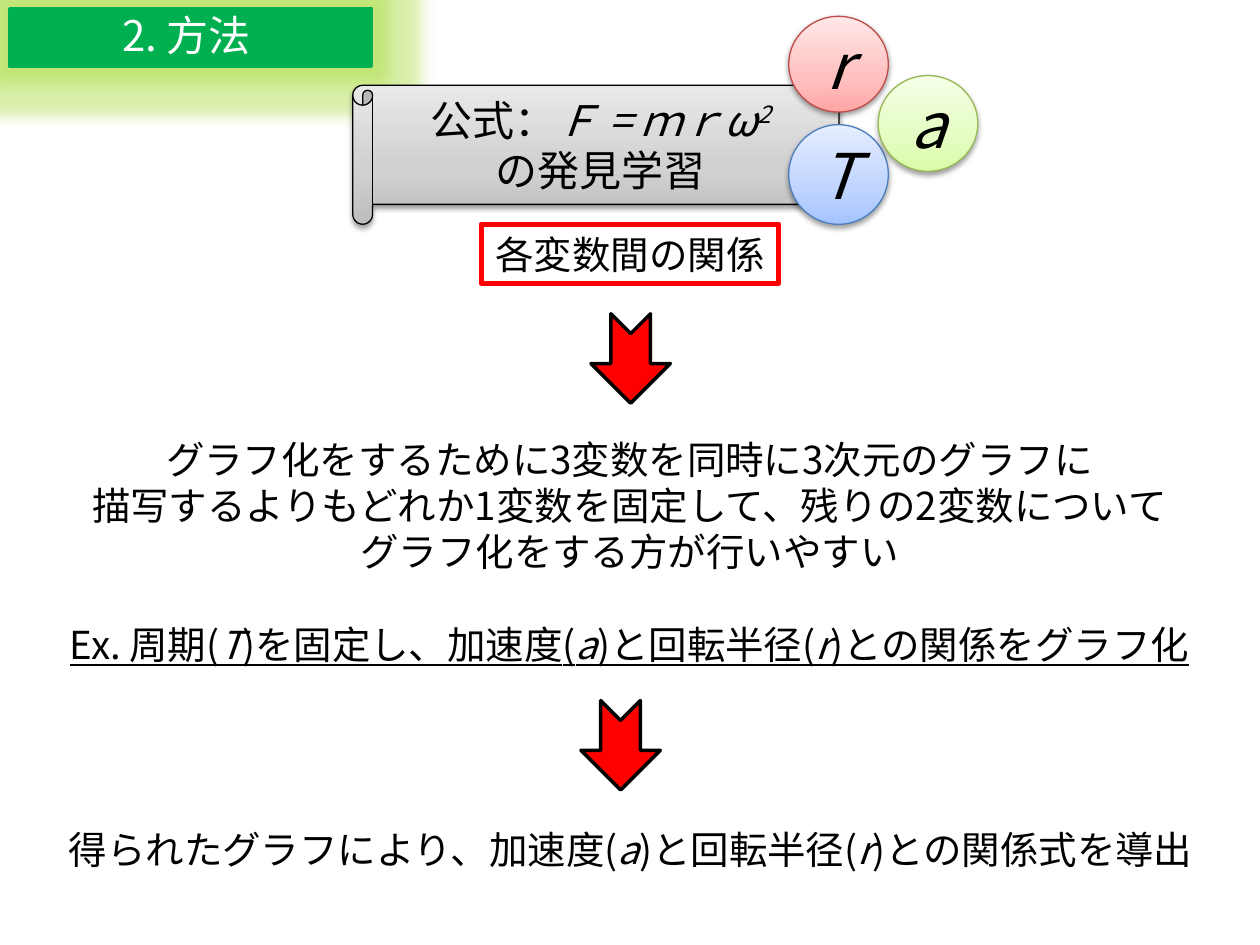
import pptx
import pptx.dml.color
import pptx.enum.shapes
import pptx.enum.text
import pptx.oxml
import pptx.oxml.ns
import pptx.util
from pptx.util import Inches

FONT = "Noto Sans CJK JP"
NAMESPACE = pptx.oxml.ns.nsdecls("a")
SHAPES = pptx.enum.shapes.MSO_SHAPE
ANCHORS = pptx.enum.text.MSO_ANCHOR
CENTER = pptx.enum.text.PP_ALIGN.CENTER


def color(value):
    return pptx.dml.color.RGBColor.from_string(value)


def set_text(shape, paragraphs, size, hue="000000", anchor=ANCHORS.MIDDLE, wrap=True):
    """Write paragraphs, each a list of (text, style) with style letters i, u and ^."""
    frame = shape.text_frame
    frame.auto_size = pptx.enum.text.MSO_AUTO_SIZE.NONE
    frame.word_wrap = wrap
    frame.vertical_anchor = anchor
    for index, runs in enumerate(paragraphs):
        para = frame.add_paragraph() if index else frame.paragraphs[0]
        para.alignment = CENTER
        for text, style in runs:
            span = para.add_run()
            span.text = text
            span.font.name = FONT
            span.font.size = pptx.util.Pt(size)
            span.font.color.rgb = color(hue)
            span.font.italic = "i" in style
            span.font.underline = "u" in style
            properties = span.font._element
            properties.append(pptx.oxml.parse_xml(
                f'<a:ea {NAMESPACE} typeface="{FONT}"/>'))
            if "^" in style:
                properties.set("baseline", "30000")


def add_outlined(page, kind, place, line, width, fill=None):
    shape = page.shapes.add_shape(kind, *map(Inches, place))
    shape.shadow.inherit = False
    shape.line.color.rgb = color(line)
    shape.line.width = pptx.util.Pt(width)
    if fill:
        shape.fill.solid()
        shape.fill.fore_color.rgb = color(fill)
    else:
        shape.fill.background()
    return shape


def add_effect(shape, tag, attributes, hue, alpha):
    effects = shape._element.spPr.find(pptx.oxml.ns.qn("a:effectLst"))
    effects.append(pptx.oxml.parse_xml(
        f'<a:{tag} {NAMESPACE} {attributes}><a:srgbClr val="{hue}">'
        f'<a:alpha val="{alpha * 1000}"/></a:srgbClr></a:{tag}>'))


def add_shaded(page, kind, place, line, stops):
    """Add a shape with a soft shadow and three colours from bottom to top."""
    shape = add_outlined(page, kind, place, line, 0.75)
    shape.fill.gradient()
    shape.fill.gradient_angle = 90
    stop_list = shape._element.spPr.find(".//" + pptx.oxml.ns.qn("a:gsLst"))
    stop_list.clear()
    for position, hue in zip((0, 35, 100), stops):
        stop_list.append(pptx.oxml.parse_xml(
            f'<a:gs {NAMESPACE} pos="{position * 1000}"><a:srgbClr val="{hue}"/></a:gs>'))
    add_effect(shape, "outerShdw", 'blurRad="40000" dist="20000" dir="5400000" rotWithShape="0"',
               "000000", 38)
    return shape


def add_variable(page, letter, place, line, stops):
    circle = add_shaded(page, SHAPES.OVAL, place, line, stops)
    set_text(circle, [[(letter, "i")]], 36)


def add_down_arrow(page, left, top):
    arrow = add_outlined(page, SHAPES.NOTCHED_RIGHT_ARROW, (left, top, 0.71, 0.63),
                         "000000", 2, "FF0000")
    arrow.rotation = 90


def add_explanation(page, place, paragraphs):
    box = page.shapes.add_textbox(*map(Inches, place))
    set_text(box, paragraphs, 22, anchor=ANCHORS.TOP, wrap=False)
    return box


def acceleration_and_radius(opening, ending, style=""):
    """Runs that name the variables a and r between an opening and an ending."""
    return [(opening + "加速度(", style), ("a", style + "i"), (")と回転半径(", style),
            ("r", style + "i"), (")" + ending, style)]


def add_heading(page):
    banner = add_outlined(page, SHAPES.RECTANGLE, (0.08, 0.07, 2.87, 0.46),
                          "00B050", 2, "00B050")
    add_effect(banner, "glow", 'rad="228600"', "A2D72B", 40)
    title = page.shapes.title
    title.left, title.top, title.width, title.height = map(Inches, (0.12, 0.02, 2.72, 0.51))
    set_text(title, [[("2. 方法", "")]], 24, "FFFFFF")
    page.shapes._spTree.append(title._element)


def main():
    deck = pptx.Presentation()
    deck.slide_width, deck.slide_height = Inches(10), Inches(7.5)
    page = deck.slides.add_slide(deck.slide_layouts[5])

    add_heading(page)
    scroll = add_shaded(page, SHAPES.HORIZONTAL_SCROLL, (2.8, 0.52, 3.86, 1.26),
                        "000000", ("BDBDBD", "D1D1D1", "EEEEEE"))
    set_text(scroll, [[("公式：", ""), ("Ｆ = ｍｒω", "i"), ("2", "i^")],
                      [("の発見学習", "")]], 24)

    add_variable(page, "T", (6.26, 0.99, 0.79, 0.79), "4B7EBC", ("A4C4FF", "BFD4FF", "E6EEFF"))
    add_variable(page, "r", (6.26, 0.13, 0.79, 0.76), "BF4C48", ("FFA6A5", "FFC0BF", "FFE7E7"))
    add_variable(page, "a", (6.97, 0.6, 0.79, 0.76), "98B955", ("DAFDA7", "E4FCC2", "F5FFE7"))

    relation = add_outlined(page, SHAPES.RECTANGLE, (3.82, 1.78, 2.36, 0.47), "FF0000", 3)
    set_text(relation, [[("各変数間の関係", "")]], 22, wrap=False)

    add_down_arrow(page, 4.65, 2.53)
    reasoning = add_explanation(page, (0.19, 3.41, 9.61, 1.95), [
        [("グラフ化をするために3変数を同時に3次元のグラフに", "")],
        [("描写するよりもどれか1変数を固定して、残りの2変数について", "")],
        [("グラフ化をする方が行いやすい", "")],
        [("Ex. 周期(", "u"), ("T", "ui")]
        + acceleration_and_radius(")を固定し、", "との関係をグラフ化", "u"),
    ])
    reasoning.text_frame.paragraphs[-1].space_before = pptx.util.Pt(26.5)

    add_down_arrow(page, 4.57, 5.6)
    add_explanation(page, (0.12, 6.51, 9.77, 0.47),
                    [acceleration_and_radius("得られたグラフにより、", "との関係式を導出")])
    deck.save("out.pptx")


if __name__ == "__main__":
    main()
